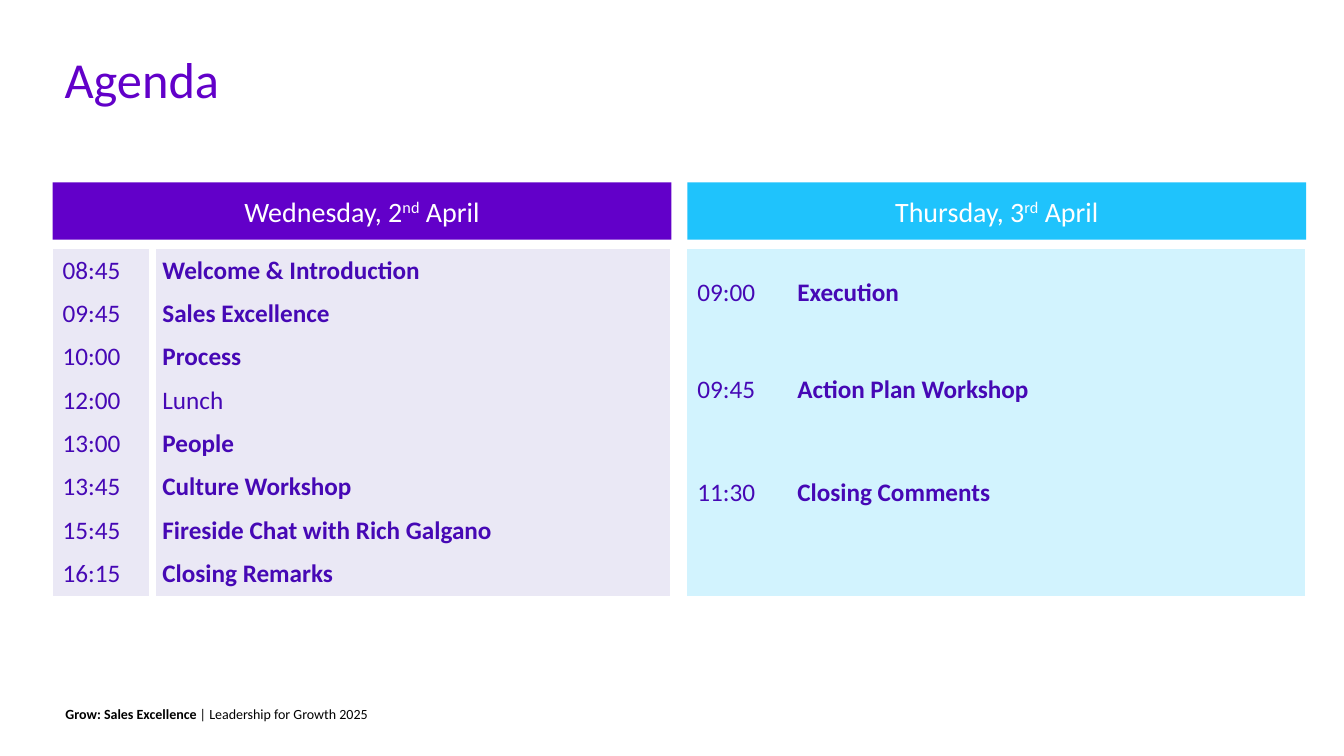
"""Build the two-day agenda slide."""
from dataclasses import dataclass

from lxml import etree
from pptx import Presentation
from pptx import util as u
from pptx.dml import color
from pptx.enum import shapes, text
from pptx.oxml import ns

FONT = "Calibri"
PURPLE = "6200C9"
WHITE = "FFFFFF"
TIME_WIDTH, TOPIC_WIDTH = 71.3, 370
HEADER_TOP, HEADER_WIDTH, HEADER_HEIGHT = 130.3, 442, 41
TABLE_TOP = 177.8
PLAIN_STYLE = "{2D5ABB26-0587-4C30-8999-92F81FD0307C}"


@dataclass(frozen=True)
class Session:
    time: str
    topic: str
    height: float = 30.96
    bold: bool = True


@dataclass(frozen=True)
class Day:
    left: float
    date: tuple[str, str, str]
    header_color: str
    cell_color: str
    divider: bool
    sessions: tuple[Session, ...]


DAYS = (
    Day(37.5, ("Wednesday, 2", "nd", " April"), PURPLE, "EAE8F5", True, (
        Session("08:45", "Welcome & Introduction"),
        Session("09:45", "Sales Excellence"),
        Session("10:00", "Process"),
        Session("12:00", "Lunch", bold=False),
        Session("13:00", "People"),
        Session("13:45", "Culture Workshop"),
        Session("15:45", "Fireside Chat with Rich Galgano"),
        Session("16:15", "Closing Remarks"),
    )),
    Day(491, ("Thursday, 3", "rd", " April"), "1FC3FC", "D2F3FE", False, (
        Session("09:00", "Execution", 62.6),
        Session("09:45", "Action Plan Workshop", 76.3),
        Session("11:30", "Closing Comments", 70.6),
        Session("", "", 38.2),
    )),
)


def rgb(value: str) -> color.RGBColor:
    return color.RGBColor.from_string(value)


def style_run(run, size: float, hue: str, bold: bool = False) -> None:
    run.font.name = FONT
    run.font.size = u.Pt(size)
    run.font.bold = bold
    run.font.color.rgb = rgb(hue)


def set_frame(frame, anchor, bottom: float = 0) -> None:
    frame.word_wrap = True
    frame.auto_size = text.MSO_AUTO_SIZE.NONE
    frame.vertical_anchor = anchor
    frame.margin_left = frame.margin_right = frame.margin_top = 0
    frame.margin_bottom = u.Pt(bottom)


def add_divider(cell, side: str) -> None:
    line = etree.Element(ns.qn(f"a:{side}"), w=str(u.Pt(6)))
    fill = etree.SubElement(line, ns.qn("a:solidFill"))
    etree.SubElement(fill, ns.qn("a:srgbClr"), val=WHITE)
    cell._tc.get_or_add_tcPr().insert(0, line)


def add_title(slide) -> None:
    title = slide.shapes.title
    title.left, title.top, title.width, title.height = map(u.Pt, (46.1, 34.6, 828, 47.5))
    set_frame(title.text_frame, text.MSO_ANCHOR.TOP, 3.6)
    title.text_frame.text = "Agenda"
    paragraph = title.text_frame.paragraphs[0]
    paragraph.alignment = text.PP_ALIGN.LEFT
    style_run(paragraph.runs[0], 36, PURPLE)


def add_footer(slide) -> None:
    footer = slide.shapes.add_textbox(*map(u.Pt, (46.8, 504, 307.4, 12.2)))
    set_frame(footer.text_frame, text.MSO_ANCHOR.MIDDLE)
    paragraph = footer.text_frame.paragraphs[0]
    for wording, bold in (("Grow: Sales Excellence ", True),
                          ("| Leadership for Growth 2025", False)):
        run = paragraph.add_run()
        run.text = wording
        style_run(run, 10, "000000", bold)


def add_header(slide, day: Day) -> None:
    header = slide.shapes.add_shape(
        shapes.MSO_SHAPE.RECTANGLE,
        *map(u.Pt, (day.left, HEADER_TOP, HEADER_WIDTH, HEADER_HEIGHT)))
    header.shadow.inherit = False
    header.fill.solid()
    header.fill.fore_color.rgb = rgb(day.header_color)
    header.line.fill.background()
    header.text_frame.vertical_anchor = text.MSO_ANCHOR.MIDDLE
    paragraph = header.text_frame.paragraphs[0]
    paragraph.alignment = text.PP_ALIGN.CENTER
    for wording, baseline in zip(day.date, (0, 30000, 0)):
        run = paragraph.add_run()
        run.text = wording
        style_run(run, 20, WHITE)
        if baseline:
            run.font._element.set("baseline", str(baseline))


def fill_cell(cell, wording: str, bold: bool, fill: str) -> None:
    cell.fill.solid()
    cell.fill.fore_color.rgb = rgb(fill)
    cell.vertical_anchor = text.MSO_ANCHOR.MIDDLE
    if wording:
        cell.text_frame.text = wording
        style_run(cell.text_frame.paragraphs[0].runs[0], 18, "4608B5", bold)


def add_schedule(slide, day: Day) -> None:
    height = sum(session.height for session in day.sessions)
    frame = slide.shapes.add_table(
        len(day.sessions), 2,
        *map(u.Pt, (day.left, TABLE_TOP, TIME_WIDTH + TOPIC_WIDTH, height)))
    schedule = frame.table
    schedule.first_row = schedule.horz_banding = False
    schedule._tbl.tblPr.find(ns.qn("a:tableStyleId")).text = PLAIN_STYLE
    for column, width in zip(schedule.columns, (TIME_WIDTH, TOPIC_WIDTH)):
        column.width = u.Pt(width)
    for row, session in zip(schedule.rows, day.sessions):
        row.height = u.Pt(session.height)
        time_cell, topic_cell = row.cells
        fill_cell(time_cell, session.time, False, day.cell_color)
        fill_cell(topic_cell, session.topic, session.bold, day.cell_color)
        if day.divider:
            add_divider(time_cell, "lnR")
            add_divider(topic_cell, "lnL")


def main() -> None:
    deck = Presentation()
    deck.slide_width, deck.slide_height = u.Pt(960), u.Pt(540)
    slide = deck.slides.add_slide(deck.slide_layouts[5])
    add_title(slide)
    add_footer(slide)
    for day in DAYS:
        add_header(slide, day)
        add_schedule(slide, day)
    deck.save("out.pptx")


if __name__ == "__main__":
    main()
